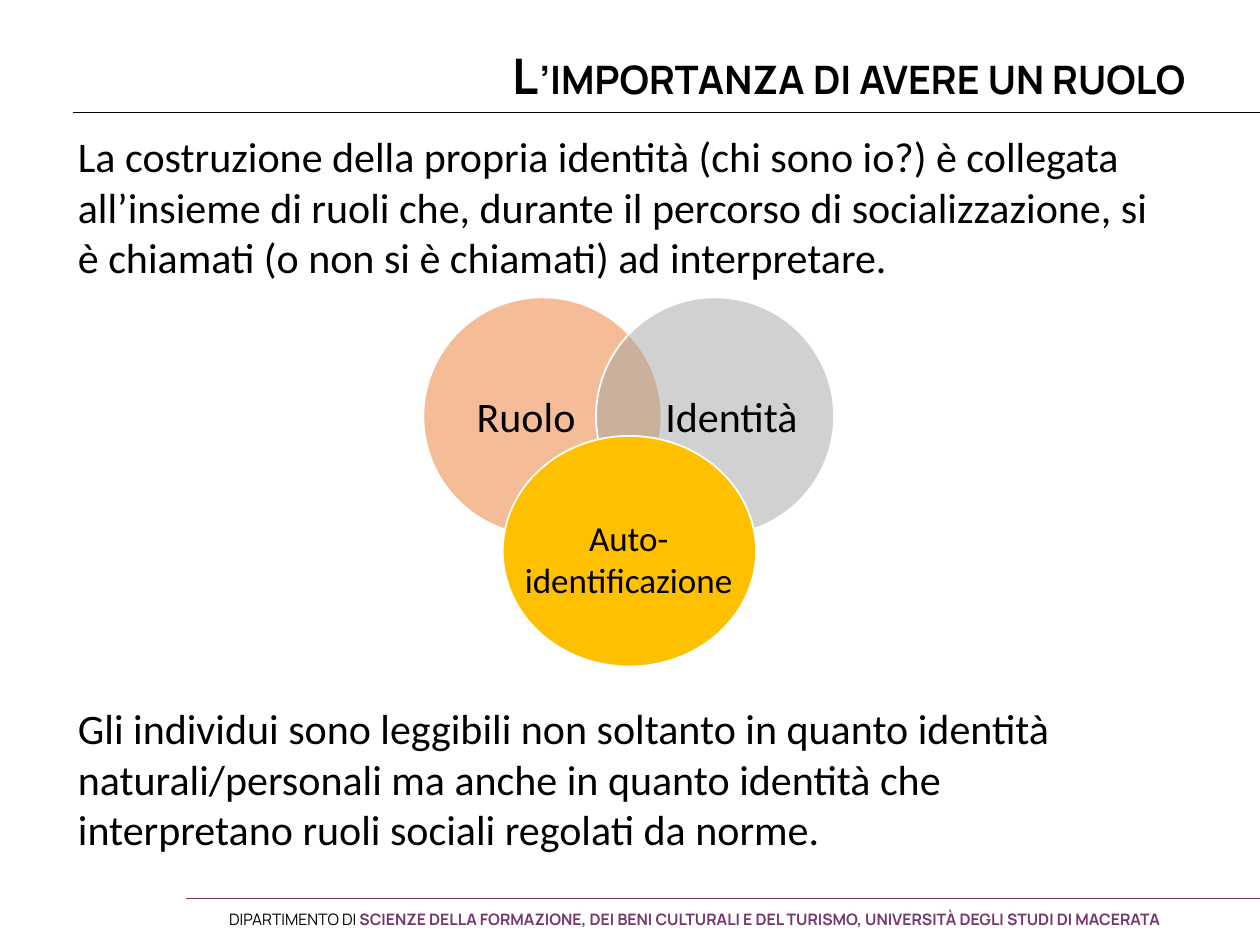
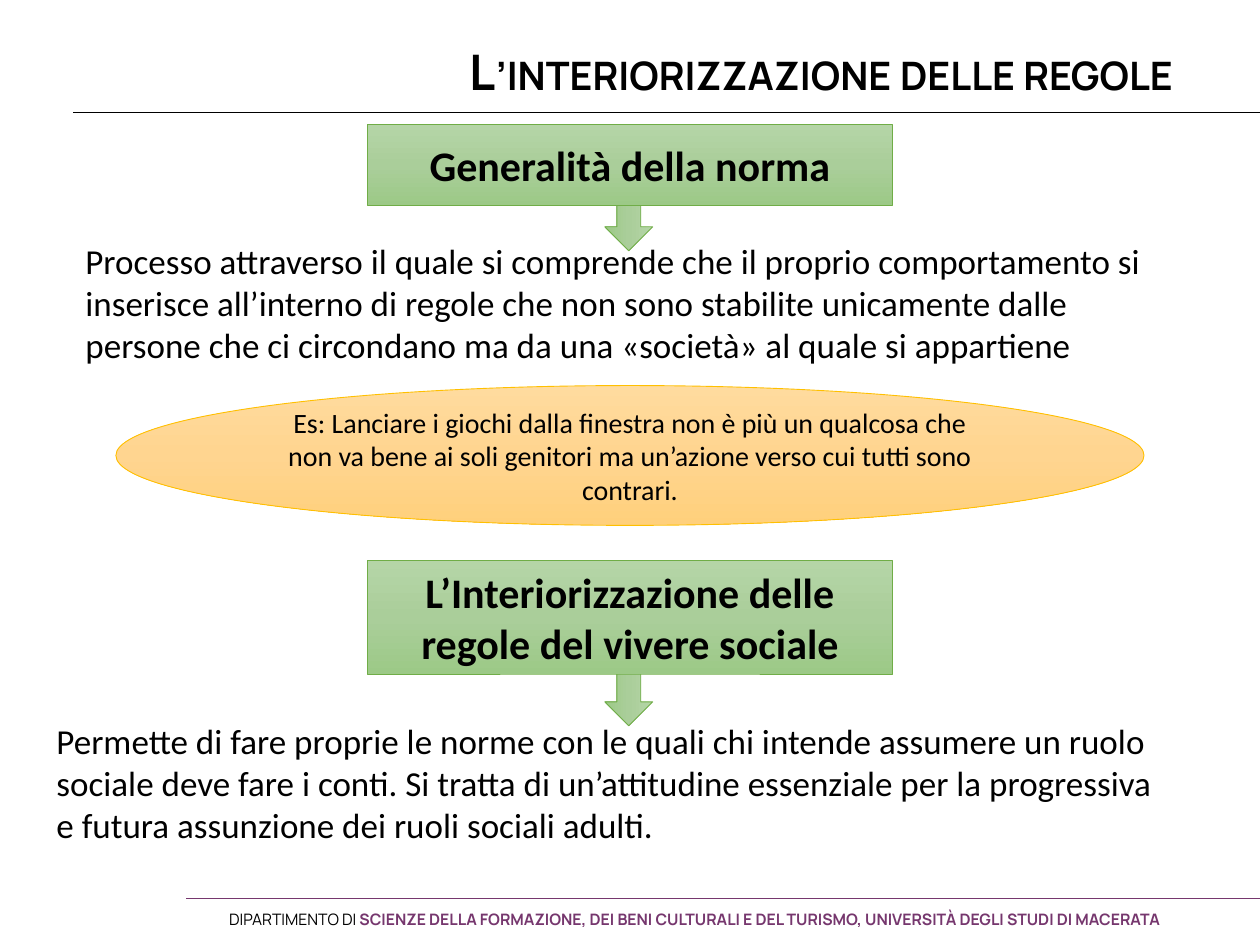
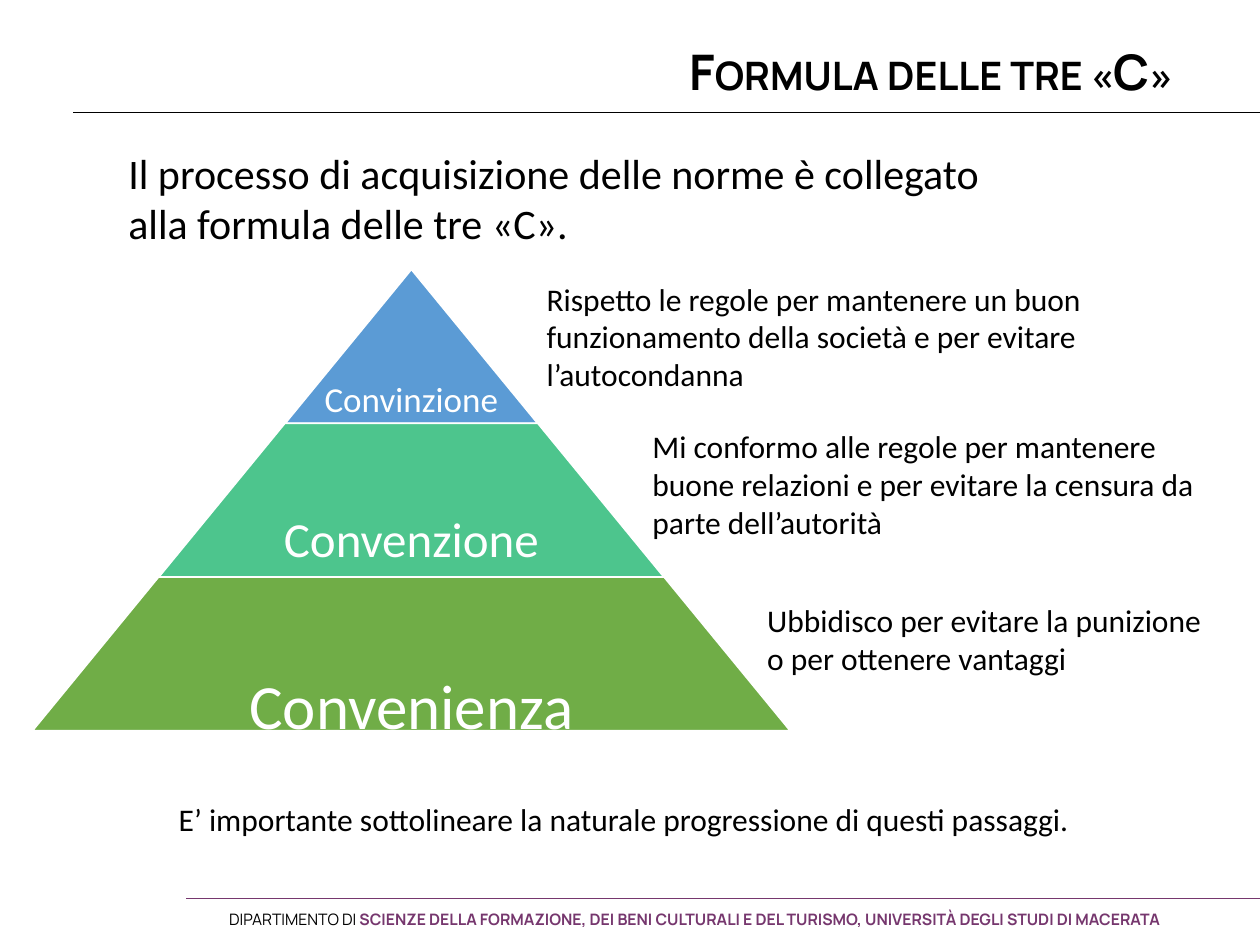
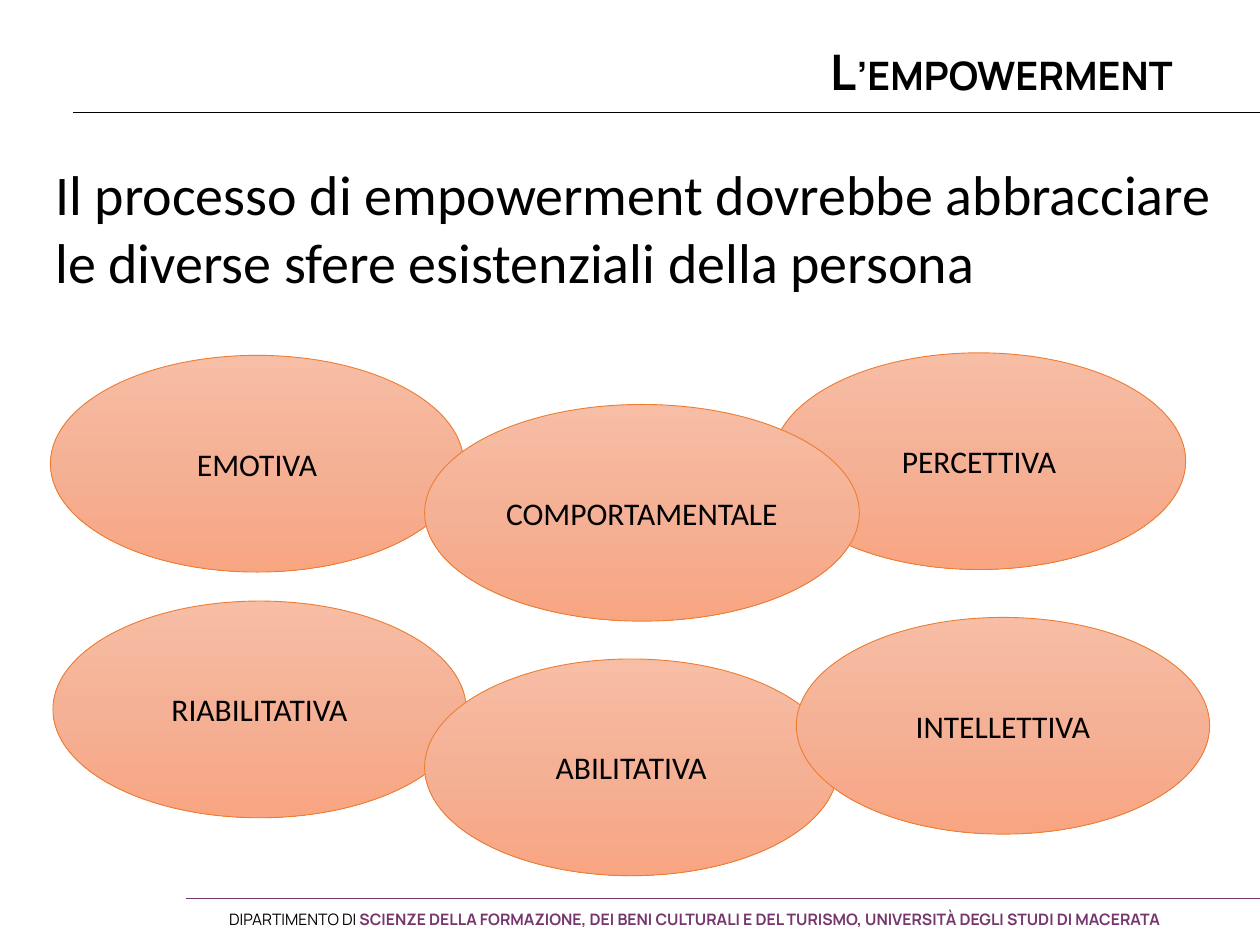
import copy
import pptx
import pptx.dml.color
import pptx.enum.shapes
import pptx.enum.text
import pptx.oxml.ns
import pptx.oxml.xmlchemy
import pptx.util

Shape = pptx.enum.shapes.MSO_SHAPE
Align = pptx.enum.text.PP_ALIGN
Anchor = pptx.enum.text.MSO_ANCHOR
qn = pptx.oxml.ns.qn
rgb = pptx.dml.color.RGBColor.from_string

BLACK, WHITE, PURPLE = "000000", "FFFFFF", "76376E"
GREEN = ["B5D5A7", "AACE9A", "9CC987"]
YELLOW = ["FFDB9E", "FFD590", "FFD07C"]
ORANGE = ["F7BDA5", "F5B196", "F8A582"]
BODY_FONT, TITLE_FONT = "Calibri", "Manrope"

deck = pptx.Presentation()
deck.slide_width = pptx.util.Inches(10)
deck.slide_height = pptx.util.Inches(7.5)
CELL = deck.slide_width / 100  # the grid has 100 columns and 75 rows


def write(frame, text, size, align=Align.LEFT, anchor=Anchor.TOP,
          color=BLACK, font=BODY_FONT, bold=False):
    frame.text = text
    frame.word_wrap = True
    frame.auto_size = pptx.enum.text.MSO_AUTO_SIZE.NONE
    frame.vertical_anchor = anchor
    for paragraph in frame.paragraphs:
        paragraph.alignment = align
        for run in paragraph.runs:
            run.font.size = pptx.util.Pt(size)
            run.font.name = font
            run.font.bold = bold
            run.font.color.rgb = rgb(color)


def add(slide, cells, kind=None, fill=None, line=WHITE, line_width=1):
    """Add a text box, or a shape of the given kind; a list as fill is a downward gradient."""
    box = [round(cell * CELL) for cell in cells]
    if kind is None:
        return slide.shapes.add_textbox(*box)
    shape = slide.shapes.add_shape(kind, *box)
    shape.shadow.inherit = False
    shape.line.color.rgb = rgb(line)
    shape.line.width = pptx.util.Pt(line_width)
    if isinstance(fill, str):
        shape.fill.solid()
        shape.fill.fore_color.rgb = rgb(fill)
        return shape
    shape.fill.gradient()
    shape.fill.gradient_angle = 270
    stops = shape.element.spPr.find(".//" + qn("a:gsLst"))
    stops.insert(1, copy.deepcopy(stops[0]))
    for stop, color, position in zip(shape.fill.gradient_stops, fill, (0, 0.5, 1)):
        stop.color.rgb = rgb(color)
        stop.position = position
    return shape


# Slides and their titles
title_only = deck.slide_layouts[5]
for placeholder in list(title_only.placeholders):
    if placeholder.placeholder_format.type != pptx.enum.shapes.PP_PLACEHOLDER.TITLE:
        placeholder.element.getparent().remove(placeholder.element)

titles = [
    ("L’importanza di avere un ruolo ", 7.4, 1),
    ("L’interiorizzazione delle regole", 5.8, 0.7),
    ("Formula delle tre «C»", 5.8, 0.7),
    ("L’empowerment", 5.8, 0.7),
]
for text, left, top in titles:
    title = deck.slides.add_slide(title_only).shapes.title
    title.left, title.top, title.width, title.height = [
        round(cell * CELL) for cell in (left, top, 88.3, 10.5)]
    write(title.text_frame, text, 28, Align.RIGHT, Anchor.MIDDLE, font=TITLE_FONT, bold=True)
    heading = title.text_frame.paragraphs[0]
    heading.line_spacing = 0.9
    heading.runs[0].font._element.set("cap", "small")
role, rules, formula, empowerment = deck.slides

# Rules and footer, drawn once and moved to the layout
shared = []
for left, top, color, width in [(5.8, 8.9, BLACK, 0.5), (14.8, 71.3, PURPLE, 1)]:
    rule = role.shapes.add_connector(
        pptx.enum.shapes.MSO_CONNECTOR.STRAIGHT,
        round(left * CELL), round(top * CELL), deck.slide_width, round(top * CELL))
    rule.line.color.rgb = rgb(color)
    rule.line.width = pptx.util.Pt(width)
    rule.element.spPr.append(pptx.oxml.xmlchemy.OxmlElement("a:effectLst"))
    shared.append(rule)
footer = add(role, (17.2, 71.7, 82.8, 2.5))
write(footer.text_frame, "DIPARTIMENTO DI ", 9, font=TITLE_FONT)
department = footer.text_frame.paragraphs[0].add_run()
department.text = ("SCIENZE DELLA FORMAZIONE, DEI BENI CULTURALI E DEL TURISMO, "
                   "UNIVERSITÀ DEGLI STUDI DI MACERATA")
department.font.size = pptx.util.Pt(9)
department.font.name = TITLE_FONT
department.font.bold = True
department.font.color.rgb = rgb(PURPLE)
for part in shared + [footer]:
    title_only.shapes.element.append(part.element)

# Slide 1: role, identity and self-identification
circles = [
    ("Ruolo", 33.6, 36.3, "ED7D31"),
    ("Identità ", 47.3, 52.6, "A5A5A5"),
]
for text, left, label_left, color in circles:
    circle = add(role, (left, 23.6, 18.9, 18.9), Shape.OVAL, color)
    alpha = pptx.oxml.xmlchemy.OxmlElement("a:alpha")
    alpha.set("val", "50000")
    circle.element.spPr.find(qn("a:solidFill"))[0].append(alpha)
    label = add(role, (label_left, 25.8, 10.9, 14.4)).text_frame
    label.margin_left = label.margin_right = 0
    write(label, text, 24, Align.CENTER, Anchor.MIDDLE)
add(role, (39.9, 34.6, 20.1, 18.3), Shape.OVAL, "FFC000")
write(add(role, (38.9, 40.5, 22, 7.7)).text_frame, "Auto-\nidentificazione", 20, Align.CENTER)

# Slide 2: generality of the norm, then interiorization
for arrow_top, box_top, box_height, text in [
    (14.9, 9.9, 6.4, "Generalità della norma"),
    (52.6, 44.5, 9, "L’Interiorizzazione delle regole del vivere sociale"),
]:
    arrow = add(rules, (46.8, arrow_top, 6.2, 3.8), Shape.RIGHT_ARROW, GREEN, "70AD47", 0.5)
    arrow.rotation = 90
    step = add(rules, (29.2, box_top, 41.6, box_height), Shape.RECTANGLE, GREEN, "70AD47", 0.5)
    write(step.text_frame, text, 24, Align.CENTER, Anchor.MIDDLE, bold=True)
example = add(rules, (9.2, 30.6, 81.6, 11.1), Shape.OVAL, YELLOW, "FFC000", 0.5)
write(example.text_frame,
      "Es: Lanciare i giochi dalla finestra non è più un qualcosa che non va bene ai soli "
      "genitori ma un’azione verso cui tutti sono contrari.",
      16, Align.CENTER, Anchor.MIDDLE)

# Slide 3: pyramid of three equal tiers, each wider by the same step
tier_height, tier_step, apex, pyramid_top = 12.2, 20.05, 32.65, 21.4
tiers = [
    ("Convinzione", 20, "5B9BD5", 10.2),
    ("Convenzione", 28, "4DC58D", 9.1),
    ("Convenienza", 36, "70AD47", 10.1),
]
for level, (text, size, color, label_middle) in enumerate(tiers):
    width = tier_step * (level + 1)
    top = pyramid_top + tier_height * level
    tier = add(formula, (apex - width / 2, top, width, tier_height), Shape.TRAPEZOID, color)
    tier.adjustments[0] = 0.82
    label = add(formula, (apex - 15, top + label_middle - 3.5, 30, 7)).text_frame
    write(label, text, size, Align.CENTER, Anchor.MIDDLE, WHITE)

# Slide 4: spheres of the person
spheres = [
    ("EMOTIVA", 4, 28.2, 32.8),
    ("RIABILITATIVA", 4.2, 47.7, 32.8),
    ("PERCETTIVA", 61.3, 28, 32.8),
    ("ABILITATIVA", 33.7, 52.3, 32.8),
    ("COMPORTAMENTALE", 33.7, 32.1, 34.5),
    ("INTELLETTIVA", 63.2, 49, 32.8),
]
for text, left, top, width in spheres:
    sphere = add(empowerment, (left, top, width, 17.2), Shape.OVAL, ORANGE, "ED7D31", 0.5)
    write(sphere.text_frame, text, 18, Align.CENTER, Anchor.MIDDLE)

# Running text of all slides
passages = [
    (role, (5.2, 9.9, 88.3, 13.1), 24,
     "La costruzione della propria identità (chi sono io?) è collegata all’insieme di ruoli "
     "che, durante il percorso di socializzazione, si è chiamati (o non si è chiamati) ad "
     "interpretare."),
    (role, (5.2, 55.3, 85.2, 13.1), 24,
     "Gli individui sono leggibili non soltanto in quanto identità naturali/personali ma "
     "anche in quanto identità che interpretano ruoli sociali regolati da norme."),
    (rules, (5.8, 18.5, 88.3, 11.1), 20,
     "Processo attraverso il quale si comprende che il proprio comportamento si inserisce "
     "all’interno di regole che non sono stabilite unicamente dalle persone che ci "
     "circondano ma da una «società» al quale si appartiene"),
    (rules, (3.5, 56.6, 90.7, 11.1), 20,
     "Permette di fare proprie le norme con le quali chi intende assumere un ruolo sociale "
     "deve fare i conti. Si tratta di un’attitudine essenziale per la progressiva e futura "
     "assunzione dei ruoli sociali adulti."),
    (formula, (9.2, 11.2, 78.8, 9.1), 24,
     "Il processo di acquisizione delle norme è collegato\nalla formula delle tre «C»."),
    (formula, (42.4, 21.7, 57.6, 10.1), 18,
     "Rispetto le regole per mantenere un buon funzionamento della società e per evitare "
     "l’autocondanna"),
    (formula, (50.8, 33.4, 46.6, 10.1), 18,
     "Mi conformo alle regole per mantenere buone relazioni e per evitare la censura da "
     "parte dell’autorità"),
    (formula, (59.9, 47.2, 37.5, 7.1), 18,
     "Ubbidisco per evitare la punizione\no per ottenere vantaggi"),
    (formula, (13.2, 63, 73.5, 4), 18,
     "E’ importante sottolineare la naturale progressione di questi passaggi."),
    (empowerment, (3.4, 12.2, 95, 11.8), 32,
     "Il processo di empowerment dovrebbe abbracciare le diverse sfere esistenziali della "
     "persona"),
]
for slide, cells, size, text in passages:
    write(add(slide, cells).text_frame, text, size)

deck.save("out.pptx")
